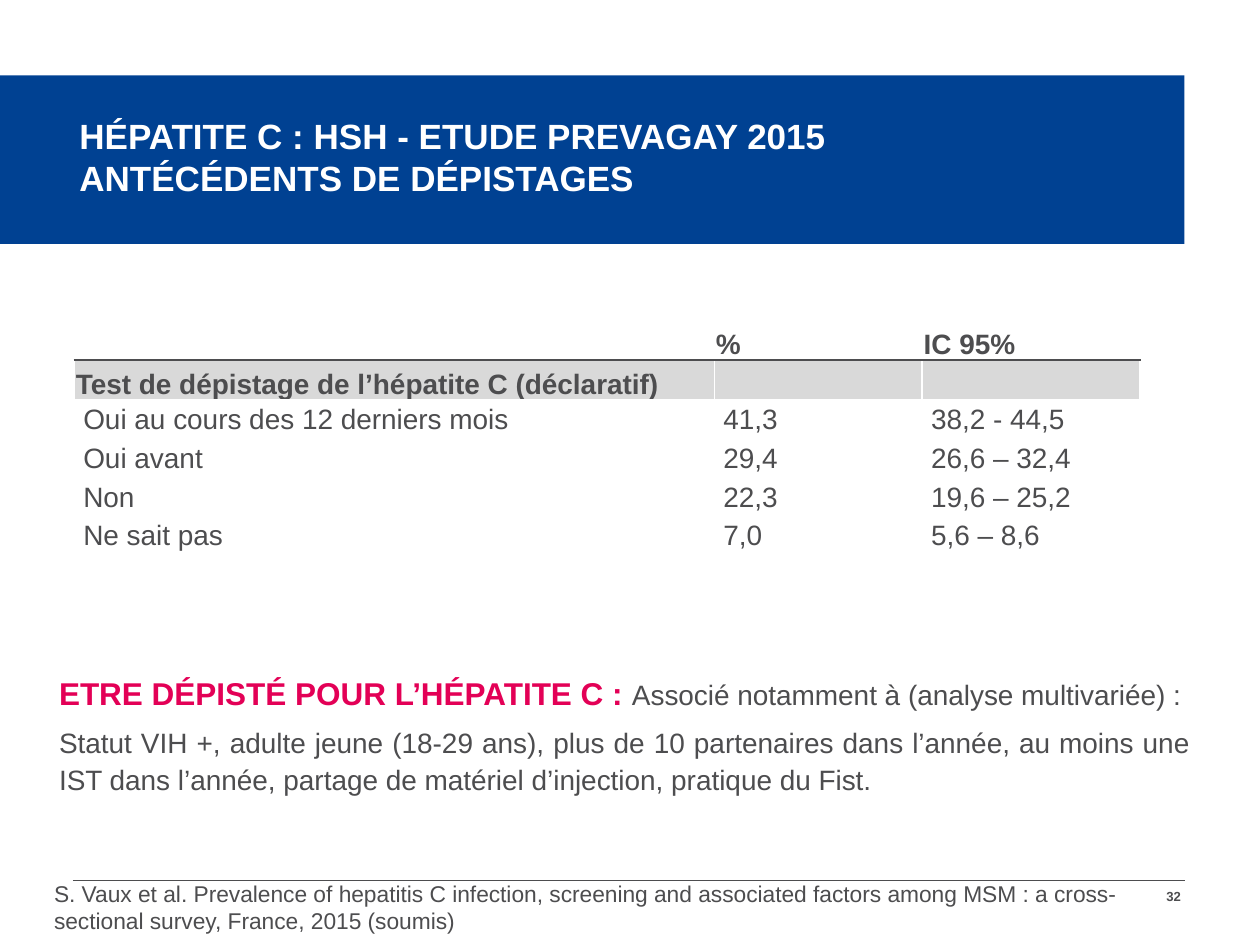
"""Build the slide on hepatitis C screening history in the Prevagay 2015 study."""
from dataclasses import dataclass

from lxml import etree
from pptx import Presentation
from pptx import util as u
from pptx.dml.color import RGBColor
from pptx.enum import shapes, text
from pptx.oxml import ns


@dataclass(frozen=True)
class Theme:
    font: str = "Arial"
    blue: str = "004192"
    grey: str = "4D4D4F"
    pink: str = "E30056"
    shade: str = "D9D9D9"
    white: str = "FFFFFF"
    title: float = 20
    heading: float = 18
    body: float = 16
    source: float = 13
    number: float = 7.5


theme = Theme()


def style(paragraph, size, color, bold=False):
    for run in paragraph.runs:
        run.font.name = theme.font
        run.font.size = u.Pt(size)
        run.font.bold = bold
        run.font.color.rgb = RGBColor.from_string(color)


def place(box, left, top, width, height, anchor=text.MSO_ANCHOR.TOP, wrap=True):
    box.left, box.top, box.width, box.height = map(u.Cm, (left, top, width, height))
    frame = box.text_frame
    frame.auto_size = text.MSO_AUTO_SIZE.NONE
    frame.word_wrap = wrap
    frame.vertical_anchor = anchor
    frame.margin_left = frame.margin_right = u.Cm(0.1)
    frame.margin_top = frame.margin_bottom = 0
    return frame


prs = Presentation()
prs.slide_width, prs.slide_height = u.Cm(25.4), u.Cm(19.05)
slide = prs.slides.add_slide(prs.slide_layouts[1])
title, findings = slide.placeholders

band = slide.shapes.add_shape(
    shapes.MSO_SHAPE.RECTANGLE, 0, u.Cm(1.52), u.Cm(23.88), u.Cm(3.4))
band.shadow.inherit = False
band.fill.solid()
band.fill.fore_color.rgb = RGBColor.from_string(theme.blue)
band.line.fill.background()
title.element.addprevious(band.element)

heading = place(title, 1.5, 1.57, 18.21, 3.18, text.MSO_ANCHOR.MIDDLE)
heading.text = "HÉPATITE C : HSH - ETUDE PREVAGAY 2015\vANTÉCÉDENTS DE DÉPISTAGES"
heading.paragraphs[0].alignment = text.PP_ALIGN.LEFT
style(heading.paragraphs[0], theme.title, theme.white, True)

rule = slide.shapes.add_connector(
    shapes.MSO_CONNECTOR.STRAIGHT, u.Cm(1.47), u.Cm(17.75), u.Cm(23.88), u.Cm(17.75))
rule.line.color.rgb = RGBColor.from_string(theme.grey)
rule.line.width = u.Pt(0.75)
etree.SubElement(rule.element.spPr, ns.qn("a:effectLst"))

results = [
    ("", "%", "IC 95%"),
    ("Test de dépistage de l’hépatite C (déclaratif)", "", ""),
    ("Oui au cours des 12 derniers mois", "41,3", "38,2 - 44,5"),
    ("Oui avant", "29,4", "26,6 – 32,4"),
    ("Non", "22,3", "19,6 – 25,2"),
    ("Ne sait pas", "7,0", "5,6 – 8,6"),
]
widths = (12.9, 4.19, 4.39)
row_height = 0.78
table = slide.shapes.add_table(
    len(results), len(widths), u.Cm(1.5), u.Cm(6.45),
    u.Cm(sum(widths)), u.Cm(row_height * len(results))).table
table.first_row = table.horz_banding = False
for column, width in zip(table.columns, widths):
    column.width = u.Cm(width)

for r, values in enumerate(results):
    table.rows[r].height = u.Cm(row_height)
    is_head = r < 2
    for c, value in enumerate(values):
        cell = table.cell(r, c)
        cell.text = value
        cell.margin_left = cell.margin_right = u.Cm(0.03 if is_head else 0.18)
        cell.margin_top = u.Cm(0.03 if is_head else 0)
        cell.margin_bottom = 0
        cell.vertical_anchor = text.MSO_ANCHOR.BOTTOM if is_head else text.MSO_ANCHOR.TOP
        cell.fill.solid()
        cell.fill.fore_color.rgb = RGBColor.from_string(theme.shade if r == 1 else theme.white)
        entry = cell.text_frame.paragraphs[0]
        entry.line_spacing = 1.0 if is_head else 1.15
        style(entry, theme.body, theme.grey, is_head)
        properties = cell._tc.get_or_add_tcPr()
        for i, side in enumerate(("lnL", "lnR", "lnT", "lnB")):
            dark = (r, side) in ((0, "lnB"), (1, "lnT"))
            border = etree.Element(ns.qn(f"a:{side}"), w=str(u.Pt(1)))
            paint = etree.SubElement(border, ns.qn("a:solidFill"))
            etree.SubElement(paint, ns.qn("a:srgbClr"), val=theme.grey if dark else theme.white)
            properties.insert(i, border)

findings.fill.solid()
findings.fill.fore_color.rgb = RGBColor.from_string(theme.white)
frame = place(findings, 1.09, 13.51, 23.01, 3.4)
lead = frame.paragraphs[0]
factors = frame.add_paragraph()
factors.level = 1
for paragraph, before in ((lead, 0), (factors, 6)):
    layout = paragraph._p.get_or_add_pPr()
    layout.set("marL", "0")
    layout.set("indent", "0")
    etree.SubElement(layout, ns.qn("a:buNone"))
    paragraph.line_spacing = 1.1
    paragraph.space_before = u.Pt(before)
lead.alignment = text.PP_ALIGN.LEFT
factors.alignment = text.PP_ALIGN.JUSTIFY
lead.add_run().text = "ETRE DÉPISTÉ POUR L’HÉPATITE C : "
lead.add_run().text = "Associé notamment à (analyse multivariée) :"
factors.add_run().text = (
    "Statut VIH +, adulte jeune (18-29 ans), plus de 10 partenaires dans l’année, "
    "au moins une IST dans l’année, partage de matériel d’injection, pratique du Fist.")
for paragraph in (lead, factors):
    style(paragraph, theme.body, theme.grey)
label = lead.runs[0].font
label.size, label.bold = u.Pt(theme.heading), True
label.color.rgb = RGBColor.from_string(theme.pink)

source = place(slide.shapes.add_textbox(0, 0, 0, 0), 0.99, 17.73, 21.92, 1.12)
source.text = (
    "S. Vaux et al. Prevalence of hepatitis C infection, screening and associated factors "
    "among MSM : a cross-sectional survey, France, 2015 (soumis)")
style(source.paragraphs[0], theme.source, theme.grey)

number = place(slide.shapes.add_textbox(0, 0, 0, 0), 23.22, 17.91, 0.69, 0.33, wrap=False)
number.text = "32"
number.paragraphs[0].alignment = text.PP_ALIGN.RIGHT
style(number.paragraphs[0], theme.number, theme.grey, True)

prs.save("out.pptx")
